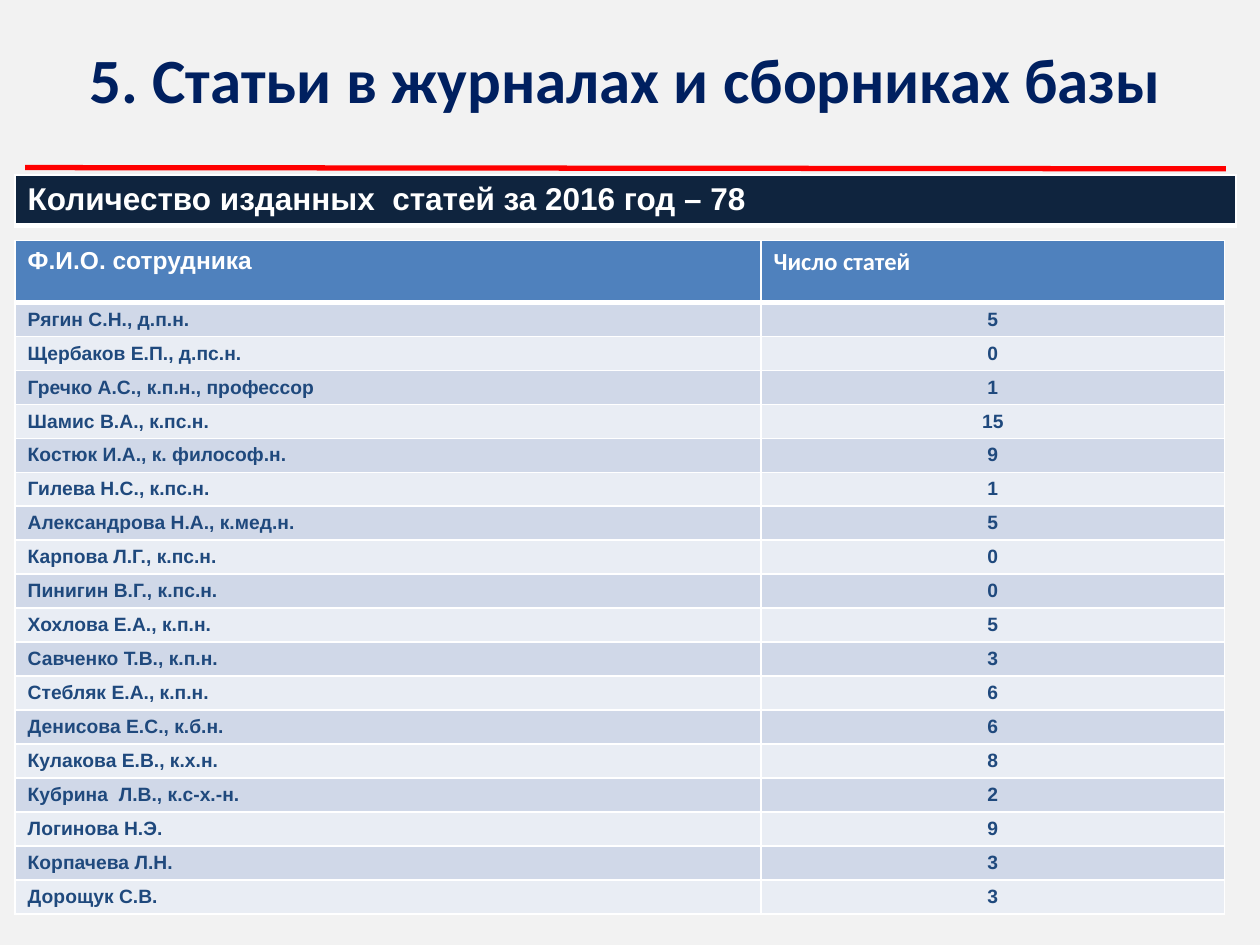
from typing import NamedTuple

from lxml import etree
from pptx import Presentation
from pptx.dml.color import RGBColor
from pptx.enum.shapes import MSO_CONNECTOR
from pptx.enum.text import MSO_ANCHOR, PP_ALIGN
from pptx.oxml.ns import qn
from pptx.util import Inches, Pt

LEFT, CENTER = PP_ALIGN.LEFT, PP_ALIGN.CENTER
MIDDLE = MSO_ANCHOR.MIDDLE
STRAIGHT = MSO_CONNECTOR.STRAIGHT

COLORS = {
    "background": "F2F2F2",
    "title": "002060",
    "rule": "FF0000",
    "banner": "0F243E",
    "header": "4F81BD",
    "odd": "D0D8E8",
    "even": "E9EDF4",
    "name": "1F497D",
    "white": "FFFFFF",
}


class Author(NamedTuple):
    name: str
    articles: int


class CellStyle(NamedTuple):
    fill: str
    color: str
    size: float
    font: str = "Arial"
    align: PP_ALIGN = LEFT
    bottom: float = 1


AUTHORS = [
    Author("Рягин С.Н., д.п.н.", 5),
    Author("Щербаков Е.П., д.пс.н.", 0),
    Author("Гречко А.С., к.п.н., профессор", 1),
    Author("Шамис В.А., к.пс.н.", 15),
    Author("Костюк И.А., к. философ.н.", 9),
    Author("Гилева Н.С., к.пс.н.", 1),
    Author("Александрова Н.А., к.мед.н.", 5),
    Author("Карпова Л.Г., к.пс.н.", 0),
    Author("Пинигин В.Г., к.пс.н.", 0),
    Author("Хохлова Е.А., к.п.н.", 5),
    Author("Савченко Т.В., к.п.н.", 3),
    Author("Стебляк Е.А., к.п.н.", 6),
    Author("Денисова Е.С., к.б.н.", 6),
    Author("Кулакова Е.В., к.х.н.", 8),
    Author("Кубрина  Л.В., к.с-х.-н.", 2),
    Author("Логинова Н.Э.", 9),
    Author("Корпачева Л.Н.", 3),
    Author("Дорощук С.В.", 3),
]


def rgb(name: str) -> RGBColor:
    return RGBColor.from_string(COLORS[name])


def format_paragraph(p, font: str, size: float, color: str, align: PP_ALIGN) -> None:
    p.alignment = align
    p.font.name = font
    p.font.size = Pt(size)
    p.font.bold = True
    p.font.color.rgb = rgb(color)


def set_borders(cell, bottom: float) -> None:
    """White borders; they must come before the fill in the cell properties."""
    tc_pr = cell._tc.get_or_add_tcPr()
    widths = {"a:lnL": 1, "a:lnR": 1, "a:lnT": 1, "a:lnB": bottom}
    for i, (tag, width) in enumerate(widths.items()):
        ln = etree.Element(qn(tag), w=str(Pt(width)))
        fill = etree.SubElement(ln, qn("a:solidFill"))
        etree.SubElement(fill, qn("a:srgbClr"), val=COLORS["white"])
        tc_pr.insert(i, ln)


def fill_cell(cell, text: str, style: CellStyle) -> None:
    cell.text = text
    cell.margin_left = cell.margin_right = Inches(0.1)
    cell.margin_top, cell.margin_bottom = Inches(0.05), Inches(0.04)
    cell.fill.solid()
    cell.fill.fore_color.rgb = rgb(style.fill)
    format_paragraph(cell.text_frame.paragraphs[0], style.font, style.size,
                     style.color, style.align)
    set_borders(cell, style.bottom)


def add_grid(slide, left: float, top: float, widths: list[float], heights: list[float]):
    table = slide.shapes.add_table(
        len(heights), len(widths), Inches(left), Inches(top),
        Inches(sum(widths)), Inches(sum(heights))).table
    for column, width in zip(table.columns, widths):
        column.width = Inches(width)
    for row, height in zip(table.rows, heights):
        row.height = Inches(height)
    return table


def add_title(slide, text: str) -> None:
    sp = slide.shapes.title
    sp.left, sp.top = Inches(0.24), Inches(0)
    sp.width, sp.height = Inches(9.45), Inches(1.25)
    tf = sp.text_frame
    tf.text = text
    tf.vertical_anchor = MIDDLE
    format_paragraph(tf.paragraphs[0], "Calibri", 36, "title", CENTER)


def add_rule(slide) -> None:
    line = slide.shapes.add_connector(
        STRAIGHT, Inches(0.2), Inches(1.33), Inches(9.73), Inches(1.34))
    line.line.color.rgb = rgb("rule")
    line.line.width = Pt(3)
    etree.SubElement(line._element.spPr, qn("a:effectLst"))


def add_authors(slide) -> None:
    table = add_grid(slide, 0.12, 1.91, [5.92, 3.68], [0.49] + [0.27] * len(AUTHORS))
    header = CellStyle("header", "white", 14, bottom=3)
    fill_cell(table.cell(0, 0), "Ф.И.О. сотрудника", header)
    fill_cell(table.cell(0, 1), "Число статей", header._replace(font="Calibri"))
    for i, author in enumerate(AUTHORS, start=1):
        style = CellStyle("odd" if i % 2 else "even", "name", 11)
        fill_cell(table.cell(i, 0), author.name, style)
        fill_cell(table.cell(i, 1), str(author.articles), style._replace(align=CENTER))


def main() -> None:
    prs = Presentation()
    prs.slide_width, prs.slide_height = Inches(10), Inches(7.5)
    s = prs.slides.add_slide(prs.slide_layouts[5])
    s.background.fill.solid()
    s.background.fill.fore_color.rgb = rgb("background")

    # Title and red rule
    add_title(s, "5. Статьи в журналах и сборниках базы")
    add_rule(s)

    # Banner with the yearly total
    banner = add_grid(s, 0.12, 1.39, [9.69], [0.4])
    fill_cell(banner.cell(0, 0), "Количество изданных  статей за 2016 год – 78",
              CellStyle("banner", "white", 18, bottom=3))

    # Articles by author
    add_authors(s)

    prs.save("out.pptx")


if __name__ == "__main__":
    main()
